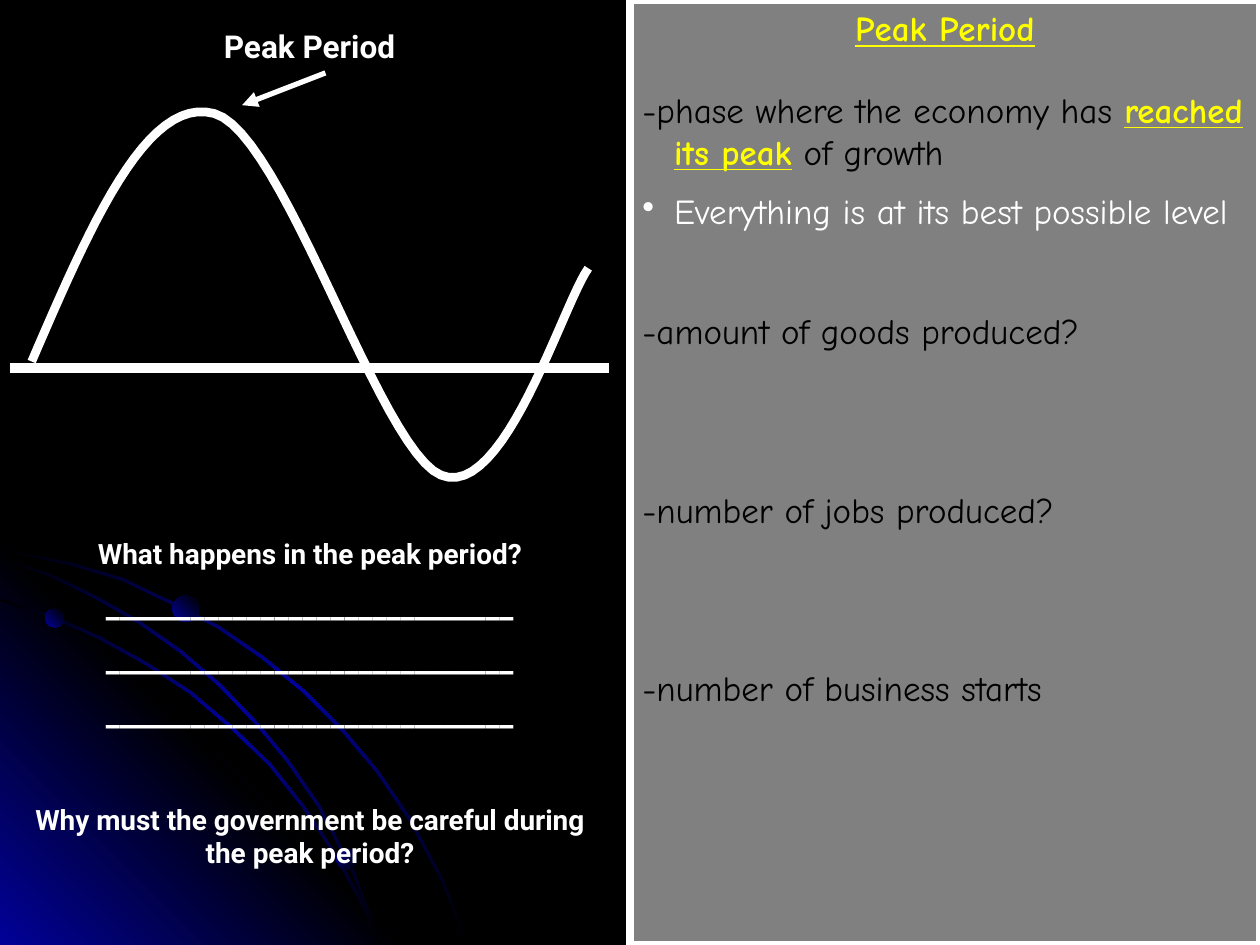
from lxml.etree import SubElement
from pptx import Presentation
from pptx.dml.color import RGBColor
from pptx.enum.shapes import MSO_CONNECTOR, MSO_SHAPE
from pptx.enum.text import MSO_ANCHOR, PP_ALIGN
from pptx.oxml.ns import qn
from pptx.util import Cm, Pt

BLACK = RGBColor(0x00, 0x00, 0x00)
WHITE = RGBColor(0xFF, 0xFF, 0xFF)
GREY = RGBColor(0x80, 0x80, 0x80)
YELLOW = RGBColor(0xFF, 0xFF, 0x00)
NAVY = RGBColor(0x01, 0x01, 0x99)

NOTES_FONT, DIAGRAM_FONT = "Comic Neue", "Roboto"
SLIDE_W, SLIDE_H = 25.4, 19.05

# Upper edges of the background arcs, in cm from the box corner
ARCS = [
    [(0, 0), (1.45, 0.3), (2.49, 0.61), (3.45, 1.07), (4.42, 1.57), (5.31, 2.18),
     (6.15, 2.87), (6.91, 3.63), (7.62, 4.47), (8.26, 5.41), (8.94, 6.68), (9.45, 8)],
    [(0, 1.02), (1.04, 1.35), (2.01, 1.78), (2.97, 2.31), (3.86, 2.89), (4.67, 3.58),
     (5.46, 4.34), (6.15, 5.21), (6.76, 6.12), (7.26, 7.03), (7.7, 8)],
    [(0, 0.18), (0.99, 0.51), (1.93, 0.96), (2.82, 1.47), (3.66, 2.06), (4.45, 2.74),
     (5.18, 3.5), (5.82, 4.27), (6.45, 5.18), (7.16, 6.55), (7.7, 8)],
]
ARC_OFFSET = 0.04
# Left, top, diameter and gradient angle
PLANETS = [(0.91, 1.22, 0.38, 315), (6.78, 6.07, 0.41, 45), (3.48, 0.96, 0.53, 315)]

# Start point, then two controls and an end point for each stretch
WAVE_START = (0.64, 7.29)
WAVE_CURVES = [
    ((1.8, 4.6), (2.95, 1.91), (4.32, 2.29)),
    ((5.72, 2.67), (7.65, 9.07), (8.89, 9.58)),
    ((10.16, 10.11), (11.35, 6.12), (11.86, 5.41)),
]
WAVE_STEPS = 24


def format_run(paragraph, text, size=18, font=DIAGRAM_FONT, color=WHITE,
               bold=False, underline=False):
    run = paragraph.add_run()
    run.text = text
    run.font.size, run.font.name = Pt(size), font
    run.font.bold, run.font.underline = bold, underline
    run.font.color.rgb = color


def format_paragraph(paragraph, text, align=PP_ALIGN.CENTER, before=0, **font_format):
    paragraph.alignment = align
    paragraph.space_before = Pt(before)
    if text:
        format_run(paragraph, text, **font_format)
    return paragraph


def place_frame(holder, left, top, width, height):
    holder.left, holder.top = Cm(left), Cm(top)
    holder.width, holder.height = Cm(width), Cm(height)
    holder.text_frame.word_wrap = True
    holder.text_frame.vertical_anchor = MSO_ANCHOR.TOP
    return holder.text_frame


def add_text_frame(slide, *box):
    return place_frame(slide.shapes.add_textbox(0, 0, 0, 0), *box)


def next_paragraph(frame, index):
    return frame.add_paragraph() if index else frame.paragraphs[0]


def set_hanging(paragraph, bullet=None):
    properties = paragraph._p.get_or_add_pPr()
    properties.set("marL", str(Cm(0.64)))
    properties.set("indent", str(-Cm(0.64)))
    if bullet:
        SubElement(properties, qn("a:buChar")).set("char", bullet)
    else:
        SubElement(properties, qn("a:buNone"))


def fill_gradient(shape, colors, angle):
    shape.shadow.inherit = False
    shape.line.fill.background()
    shape.fill.gradient()
    gradient = shape._element.spPr.find(qn("a:gradFill"))
    for child in list(gradient):
        gradient.remove(child)
    stops = SubElement(gradient, qn("a:gsLst"))
    for index, color in enumerate(colors):
        stop = SubElement(stops, qn("a:gs"))
        stop.set("pos", str(100000 * index // (len(colors) - 1)))
        SubElement(stop, qn("a:srgbClr")).set("val", str(color))
    SubElement(gradient, qn("a:lin")).set("ang", str(angle * 60000))


def add_outline(slide, points, left, top, close):
    corners = [(Cm(left + x), Cm(top + y)) for x, y in points]
    builder = slide.shapes.build_freeform(*corners[0])
    builder.add_line_segments(corners[1:], close=close)
    outline = builder.convert_to_shape()
    outline.shadow.inherit = False
    return outline


def add_line(slide, start, end, width, arrow=False):
    line = slide.shapes.add_connector(
        MSO_CONNECTOR.STRAIGHT, *(Cm(value) for value in (*start, *end)))
    line.line.color.rgb, line.line.width = WHITE, Pt(width)
    if arrow:
        SubElement(line.line._get_or_add_ln(), qn("a:tailEnd")).set("type", "triangle")
    SubElement(line._element.spPr, qn("a:effectLst"))


def wave_points():
    points = [WAVE_START]
    for control_1, control_2, end in WAVE_CURVES:
        corners = (points[-1], control_1, control_2, end)
        for step in range(1, WAVE_STEPS + 1):
            t = step / WAVE_STEPS
            weights = ((1 - t) ** 3, 3 * t * (1 - t) ** 2, 3 * t * t * (1 - t), t ** 3)
            points.append(tuple(sum(w * corner[axis] for w, corner in zip(weights, corners))
                                for axis in (0, 1)))
    return points


def add_backdrop(slide, left, top, height):
    # Glow in the lower left corner
    glow = add_outline(slide, [(8.18, height), (0, height), (0, -0.2)], left, top, True)
    fill_gradient(glow, (NAVY, BLACK, NAVY), 315)
    # Orbit arcs
    for upper in ARCS:
        lower = [(max(x - ARC_OFFSET, 0), min(y + ARC_OFFSET, height)) for x, y in upper]
        arc = add_outline(slide, upper + lower[::-1], left, top, True)
        fill_gradient(arc, (BLACK, NAVY, BLACK), 45)
    # Planets
    for x, y, diameter, angle in PLANETS:
        planet = slide.shapes.add_shape(MSO_SHAPE.OVAL, Cm(left + x), Cm(top + y),
                                        Cm(diameter), Cm(diameter))
        fill_gradient(planet, (NAVY, BLACK), angle)


def add_notes_panel(slide, left, top, width, height):
    panel = slide.shapes.add_shape(MSO_SHAPE.RECTANGLE, Cm(left), Cm(top),
                                   Cm(width), Cm(height))
    panel.shadow.inherit = False
    panel.fill.solid()
    panel.fill.fore_color.rgb = GREY
    panel.line.color.rgb, panel.line.width = WHITE, Pt(4.5)

    # Title, brought in front of the panel
    title = slide.shapes.title
    slide.shapes._spTree.append(title._element)
    frame = place_frame(title, left, top, width, 1.1)
    format_paragraph(frame.paragraphs[0], "Peak Period", size=20, font=NOTES_FONT,
                     color=YELLOW, bold=True, underline=True)

    # Notes, with room left for answers
    style = {"size": 20, "font": NOTES_FONT}
    notes = [
        ("-phase where the economy has ", 0, BLACK, None),
        ("Everything is at its best possible level", 10.2, WHITE, "•"),
        ("-amount of goods produced?", 44.2, BLACK, None),
        ("-number of jobs produced?", 78.2, BLACK, None),
        ("-number of business starts", 78.2, BLACK, None),
    ]
    frame = add_text_frame(slide, left, top + 1.65, width, 14.22)
    for index, (text, before, color, bullet) in enumerate(notes):
        note = format_paragraph(next_paragraph(frame, index), text, align=PP_ALIGN.LEFT,
                                before=before, color=color, **style)
        set_hanging(note, bullet)
    definition = frame.paragraphs[0]
    format_run(definition, "reached its peak", color=YELLOW, bold=True, underline=True, **style)
    format_run(definition, " of growth", color=BLACK, **style)


def add_cycle_diagram(slide, left, top):
    label = add_text_frame(slide, left + 0.84, top + 0.43, 10.8, 1.02)
    format_paragraph(label.paragraphs[0], "Peak Period", bold=True)
    wave = add_outline(slide, wave_points(), left, top, False)
    wave.fill.background()
    wave.line.color.rgb, wave.line.width = WHITE, Pt(5)
    add_line(slide, (left + 0.2, top + 7.42), (left + 12.27, top + 7.42), 6)
    add_line(slide, (left + 6.56, top + 1.47), (left + 4.88, top + 2.12), 3, arrow=True)


def add_questions(slide, left, top, width, height):
    answer_line = ("_" * 29, 18, 9.3)
    lines = [
        ("What happens in the peak period?", 16, 0),
        *[answer_line] * 3,
        ("Why must the government be careful during the peak period?", 16, 40),
    ]
    frame = add_text_frame(slide, left, top, width, height)
    for index, (text, size, before) in enumerate(lines):
        format_paragraph(next_paragraph(frame, index), text, before=before,
                         size=size, bold=True)


def main():
    presentation = Presentation()
    presentation.slide_width, presentation.slide_height = Cm(SLIDE_W), Cm(SLIDE_H)
    slide = presentation.slides.add_slide(presentation.slide_layouts[5])
    slide.background.fill.solid()
    slide.background.fill.fore_color.rgb = BLACK

    add_backdrop(slide, 0, 11.05, 8)
    add_notes_panel(slide, SLIDE_W / 2, 0, SLIDE_W / 2, SLIDE_H)
    add_cycle_diagram(slide, 0, 0)
    add_questions(slide, 0, 10.69, 12.5, 7.21)
    presentation.save("out.pptx")


if __name__ == "__main__":
    main()
